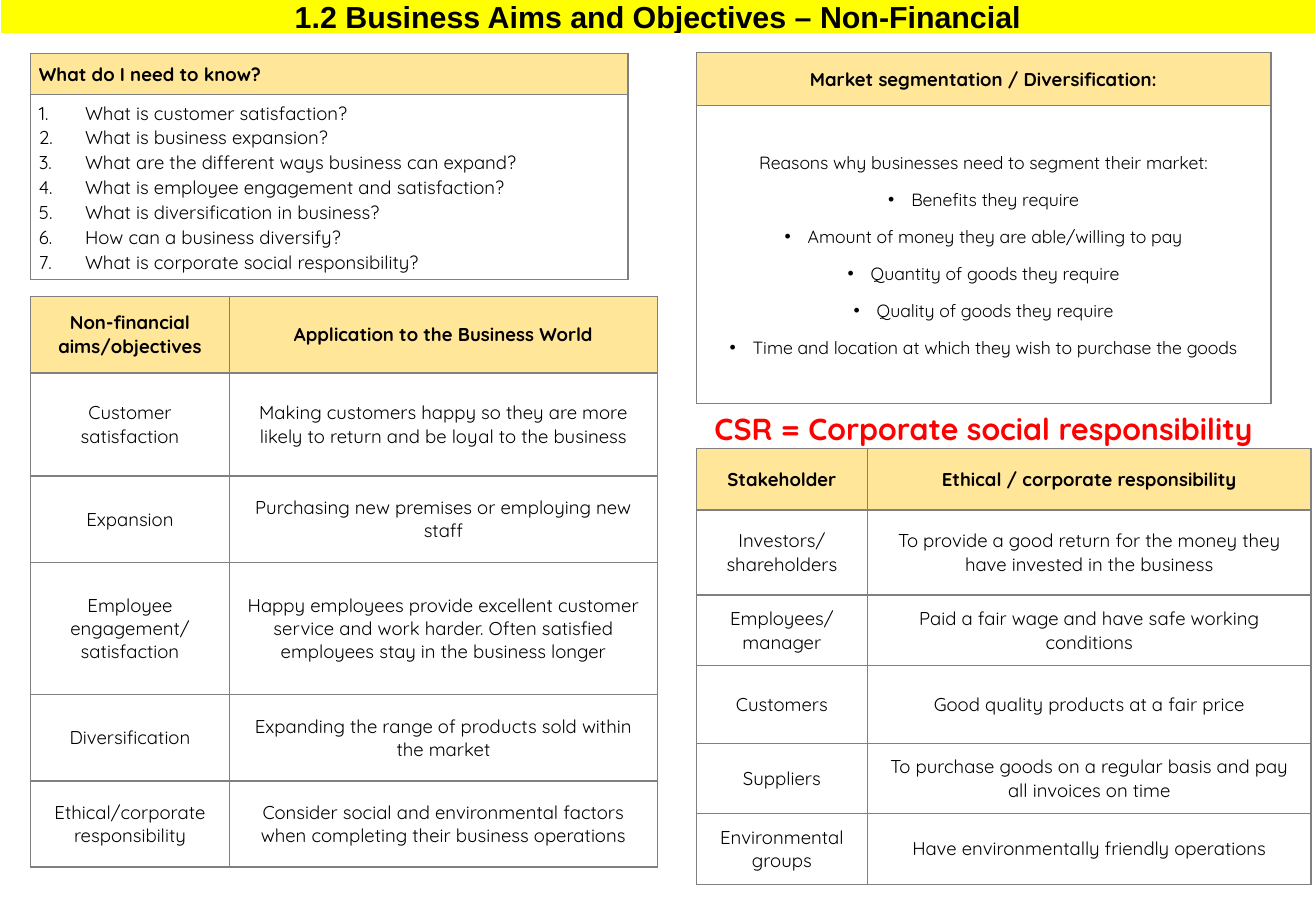
from lxml import etree
from pptx import Presentation
from pptx.dml.color import RGBColor
from pptx.enum.text import MSO_ANCHOR, PP_ALIGN
from pptx.oxml.ns import qn
from pptx.util import Pt

PX = 9144  # EMU per px, 100 px to the inch
LEFT, CENTER = PP_ALIGN.LEFT, PP_ALIGN.CENTER
TOP, MIDDLE = MSO_ANCHOR.TOP, MSO_ANCHOR.MIDDLE
NUMBERED = (38, "buAutoNum", {"type": "arabicPeriod"})
BULLETED = (19, "buChar", {"char": "•"})


def add_text(paragraph, text, size, bold=False, color="000000", font="Quicksand", align=CENTER):
    paragraph.alignment = align
    run = paragraph.add_run()
    run.text = text
    run.font.name, run.font.size, run.font.bold = font, Pt(size), bold
    run.font.color.rgb = RGBColor.from_string(color)


def add_grid(left, top, widths, heights, rows, size=11, header_size=11, font="Quicksand",
             align=CENTER, anchor=MIDDLE, spacing=None, after=None, margins=(10, 5),
             marker=None, first_marked=0, header_fill="FFE699", border="808080", bottom=1):
    """Add a bordered table whose first row is a header; a newline starts a paragraph."""
    table = slide.shapes.add_table(
        len(rows), len(widths), left * PX, top * PX, sum(widths) * PX, sum(heights) * PX).table
    table.first_row = table.horz_banding = False
    for column, width in zip(table.columns, widths):
        column.width = width * PX
    for r, (row, height) in enumerate(zip(rows, heights)):
        table.rows[r].height = height * PX
        for c, content in enumerate(row):
            cell = table.cell(r, c)
            cell.vertical_anchor = anchor
            cell.margin_left = cell.margin_right = margins[0] * PX
            cell.margin_top = cell.margin_bottom = margins[1] * PX
            properties = cell._tc.get_or_add_tcPr()
            for side, weight in (("lnL", 1), ("lnR", 1), ("lnT", 1), ("lnB", bottom)):
                line = etree.SubElement(properties, qn(f"a:{side}"), w=str(Pt(weight)))
                solid = etree.SubElement(line, qn("a:solidFill"))
                etree.SubElement(solid, qn("a:srgbClr"), val=border)
            if r == 0:
                cell.fill.solid()
                cell.fill.fore_color.rgb = RGBColor.from_string(header_fill)
            else:
                cell.fill.background()
            for i, text in enumerate(content.split("\n")):
                frame = cell.text_frame
                paragraph = frame.add_paragraph() if i else frame.paragraphs[0]
                add_text(paragraph, text, size if r else header_size, r == 0,
                         font=font, align=align)
                paragraph.line_spacing = spacing
                if r and after:
                    paragraph.space_after = Pt(after)
                if r and marker and i >= first_marked:
                    indent, tag, attributes = marker
                    ppr = paragraph._p.get_or_add_pPr()
                    ppr.set("marL", str(indent * PX))
                    ppr.set("indent", str(-indent * PX))
                    if tag == "buChar":
                        etree.SubElement(ppr, qn("a:buFont"), typeface="Arial")
                    etree.SubElement(ppr, qn(f"a:{tag}"), attributes)


prs = Presentation()
prs.slide_width, prs.slide_height = 1083 * PX, 750 * PX
slide = prs.slides.add_slide(prs.slide_layouts[6])

add_grid(0, -1, [1083], [25], [["1.2 Business Aims and Objectives – Non-Financial"]],
         header_size=18, font="Arial", anchor=TOP, spacing=1.07, margins=(7, 0),
         header_fill="FFFF00", border="FFFFFF", bottom=3)

questions = [
    "What is customer satisfaction?",
    "What is business expansion?",
    "What are the different ways business can expand?",
    "What is employee engagement and satisfaction?",
    "What is diversification in business?",
    "How can a business diversify?",
    "What is corporate social responsibility?",
]
add_grid(25, 44, [492], [34, 152], [["What do I need to know?"], ["\n".join(questions)]],
         align=LEFT, spacing=1.07, margins=(7, 0), marker=NUMBERED)

segmentation = [
    "Reasons why businesses need to segment their market:",
    "Benefits they require",
    "Amount of money they are able/willing to pay",
    "Quantity of goods they require",
    "Quality of goods they require",
    "Time and location at which they wish to purchase the goods",
]
add_grid(573, 43, [473], [44, 245],
         [["Market segmentation / Diversification:"], ["\n".join(segmentation)]],
         size=10.5, spacing=1.07, after=8, marker=BULLETED, first_marked=1)

aims = [
    ("Non-financial aims/objectives", "Application to the Business World"),
    ("Customer satisfaction",
     "Making customers happy so they are more likely to return and be loyal to the business"),
    ("Expansion", "Purchasing new premises or employing new staff"),
    ("Employee engagement/\nsatisfaction",
     "Happy employees provide excellent customer service and work harder. "
     "Often satisfied employees stay in the business longer"),
    ("Diversification", "Expanding the range of products sold within the market"),
    ("Ethical/corporate responsibility",
     "Consider social and environmental factors when completing their business operations"),
]
add_grid(25, 244, [164, 352], [63, 85, 71, 109, 71, 71], aims)

responsibilities = [
    ("Stakeholder", "Ethical / corporate responsibility"),
    ("Investors/\nshareholders",
     "To provide a good return for the money they have invested in the business"),
    ("Employees/\nmanager", "Paid a fair wage and have safe working conditions"),
    ("Customers", "Good quality products at a fair price"),
    ("Suppliers", "To purchase goods on a regular basis and pay all invoices on time"),
    ("Environmental groups", "Have environmentally friendly operations"),
]
add_grid(573, 369, [141, 365], [51, 70, 58, 64, 58, 58], responsibilities)

csr = slide.shapes.add_textbox(573 * PX, 333 * PX, 473 * PX, 40 * PX).text_frame
csr.word_wrap = True
add_text(csr.paragraphs[0], "CSR = Corporate social responsibility", 18, True, "FF0000")

prs.save("out.pptx")
